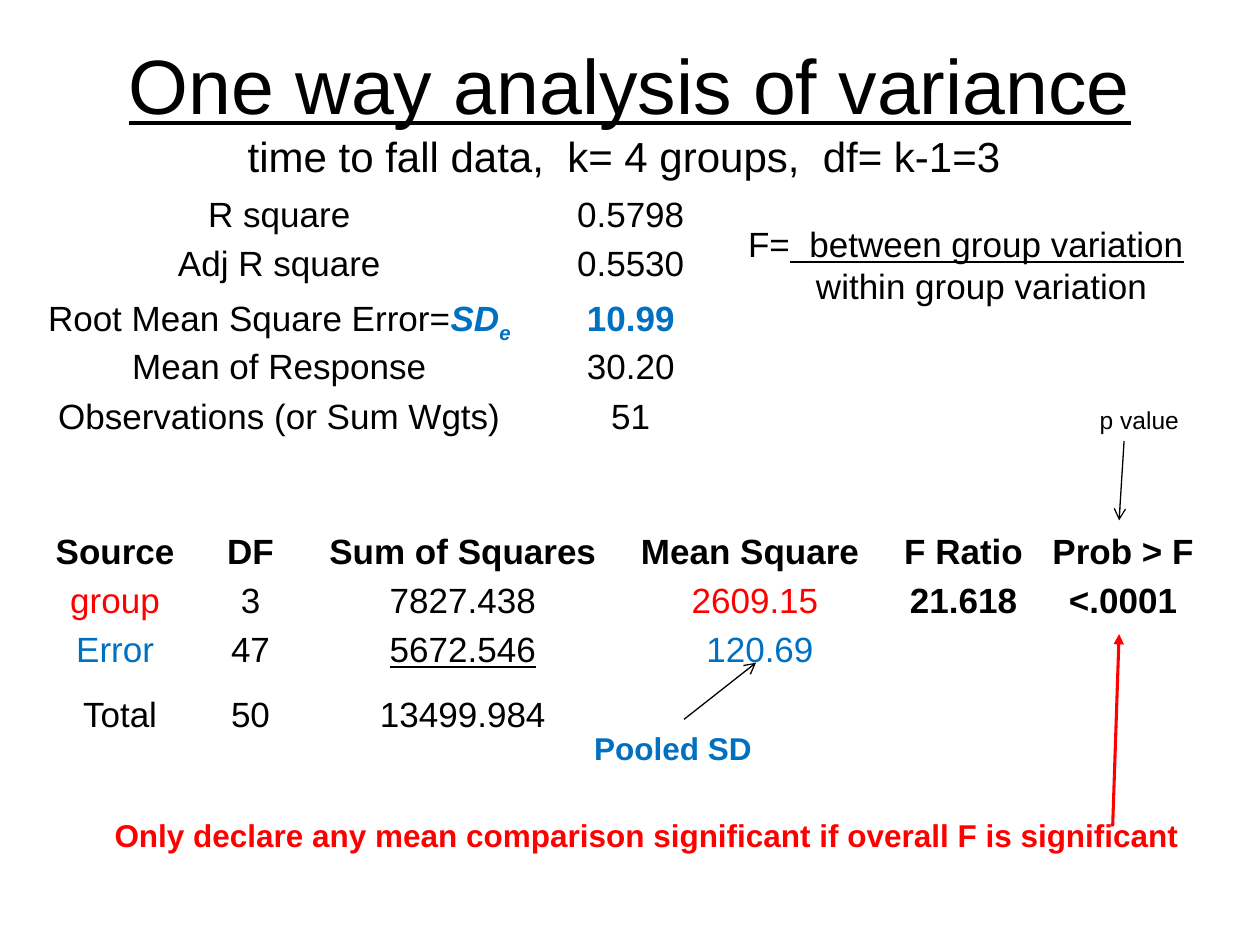
from dataclasses import dataclass

from lxml import etree
from pptx import Presentation
from pptx.dml.color import RGBColor
from pptx.enum.shapes import MSO_CONNECTOR
from pptx.enum.text import MSO_ANCHOR, MSO_AUTO_SIZE, PP_ALIGN
from pptx.oxml.ns import qn
from pptx.util import Cm, Pt

BLACK = RGBColor(0x00, 0x00, 0x00)
RED = RGBColor(0xFF, 0x00, 0x00)
BLUE = RGBColor(0x00, 0x70, 0xC0)
FONT = "Arial"
CENTER = PP_ALIGN.CENTER
TOP = MSO_ANCHOR.TOP
NO_AUTOFIT = MSO_AUTO_SIZE.NONE
STRAIGHT = MSO_CONNECTOR.STRAIGHT
TITLE_ONLY = 5


@dataclass(frozen=True)
class Words:
    text: str
    color: RGBColor = BLACK
    size: float = 20
    bold: bool = False
    italic: bool = False
    underline: bool = False
    subscript: bool = False


@dataclass(frozen=True)
class Entry:
    words: tuple[Words, ...] = ()
    indent: float = 0


@dataclass(frozen=True)
class Grid:
    left: float
    top: float
    widths: tuple[float, ...]
    heights: tuple[float, ...]
    rows: list[list[Entry]]


@dataclass(frozen=True)
class Label:
    left: float
    top: float
    width: float
    height: float
    lines: tuple[Entry, ...]


@dataclass(frozen=True)
class Arrow:
    start: tuple[float, float]
    end: tuple[float, float]
    color: RGBColor = BLACK
    weight: float = 0.75
    head: str = "arrow"


def entry(text: str, color: RGBColor = BLACK, indent: float = 0, **style) -> Entry:
    return Entry((Words(text, color, **style),), indent)


def format_run(run, words: Words) -> None:
    font = run.font
    font.name = FONT
    font.size = Pt(words.size)
    font.bold = words.bold
    font.italic = words.italic
    font.underline = words.underline
    font.color.rgb = words.color
    if words.subscript:
        run._r.get_or_add_rPr().set("baseline", "-25000")


def write(paragraph, line: Entry) -> None:
    for words in line.words:
        run = paragraph.add_run()
        run.text = words.text
        format_run(run, words)


def draw_title(slide, lines: tuple[Words, ...]) -> None:
    title = slide.shapes.title
    title.left, title.top, title.width, title.height = Cm(1.27), Cm(0.76), Cm(22.86), Cm(3.48)
    frame = title.text_frame
    frame.auto_size = NO_AUTOFIT
    frame.vertical_anchor = TOP
    frame.margin_top = 0
    heading = frame.paragraphs[0]
    heading.text = "\v".join(words.text for words in lines)
    heading.alignment = CENTER
    for run, words in zip(heading.runs, lines):
        format_run(run, words)


def draw_grid(slide, grid: Grid) -> None:
    table = slide.shapes.add_table(
        len(grid.heights), len(grid.widths), Cm(grid.left), Cm(grid.top),
        Cm(sum(grid.widths)), Cm(sum(grid.heights)),
    ).table
    table.first_row = False
    table.horz_banding = False
    for column, width in zip(table.columns, grid.widths):
        column.width = Cm(width)
    for row, height, entries in zip(table.rows, grid.heights, grid.rows):
        row.height = Cm(height)
        for cell, content in zip(row.cells, entries):
            cell.fill.background()
            cell.margin_left = Cm(0.08 + content.indent)
            cell.margin_right = Cm(0.08)
            cell.margin_top = cell.margin_bottom = 0
            paragraph = cell.text_frame.paragraphs[0]
            paragraph.alignment = CENTER
            write(paragraph, content)


def draw_label(slide, label: Label) -> None:
    frame = slide.shapes.add_textbox(
        Cm(label.left), Cm(label.top), Cm(label.width), Cm(label.height)
    ).text_frame
    frame.word_wrap = True
    frame.margin_right = 0
    for index, line in enumerate(label.lines):
        paragraph = frame.add_paragraph() if index else frame.paragraphs[0]
        if line.indent:
            paragraph._p.get_or_add_pPr().set("marL", str(Cm(line.indent)))
        write(paragraph, line)


def draw_arrow(slide, arrow: Arrow) -> None:
    connector = slide.shapes.add_connector(
        STRAIGHT, *(Cm(value) for value in arrow.start + arrow.end)
    )
    connector.line.color.rgb = arrow.color
    connector.line.width = Pt(arrow.weight)
    etree.SubElement(connector.line._get_or_add_ln(), qn("a:tailEnd"), type=arrow.head)
    etree.SubElement(connector._element.spPr, qn("a:effectLst"))


TITLE = (
    Words("One way analysis of variance", size=44, underline=True),
    Words("time to fall data,  k= 4 groups,  df= k-1=3 ", size=24),
)

SPACE = 0.2
BLANK = Entry()
ERROR_SD = Entry((
    Words("Root Mean Square Error="),
    Words("SD", BLUE, bold=True, italic=True),
    Words("e", BLUE, bold=True, italic=True, subscript=True),
))
FIT_SUMMARY = Grid(0.64, 3.94, (9.98, 4.19), (0.99, 1.12, 0.97, 0.99, 0.99), [
    [entry("R square"), entry("0.5798")],
    [entry("Adj R square"), entry("0.5530")],
    [ERROR_SD, entry("10.99", BLUE, bold=True)],
    [entry("Mean of Response"), entry("30.20")],
    [entry("Observations (or Sum Wgts)"), entry("51")],
])

HEADINGS = ("Source", "DF", "Sum of Squares", "Mean Square", "F Ratio", "Prob > F")
VARIANCE = Grid(0.76, 10.74, (3.12, 2.34, 6.22, 5.36, 3.25, 3.18), (0.99, 0.99, 1.3, 1.98), [
    [entry(heading, bold=True) for heading in HEADINGS],
    [entry("group", RED), entry("3"), entry("7827.438"), entry("2609.15", RED, SPACE),
     entry("21.618", bold=True), entry("<.0001", bold=True)],
    [entry("Error", BLUE), entry("47"), entry("5672.546", underline=True),
     entry("120.69", BLUE, 2 * SPACE), BLANK, BLANK],
    [entry("Total", indent=SPACE), entry("50"), entry("13499.984"), BLANK, BLANK, BLANK],
])

LABELS = (
    Label(11.73, 14.58, 4.11, 1.02, (entry("Pooled SD", BLUE, size=18, bold=True),)),
    Label(21.92, 8.05, 2.34, 0.86, (entry("p value", size=14),)),
    Label(2.06, 16.33, 22.02, 1.02, (
        entry("Only declare any mean comparison significant if overall F is significant",
              RED, size=18, bold=True),
    )),
    Label(14.83, 4.37, 9.73, 1.96, (
        Entry((Words("F="), Words("  between group variation", underline=True))),
        entry("within group variation", indent=1.37),
    )),
)

ARROWS = (
    Arrow((13.79, 14.5), (15.24, 13.36)),
    Arrow((22.66, 8.89), (22.56, 10.49)),
    Arrow((22.43, 16.66), (22.56, 12.78), RED, 1.75, "triangle"),
)


def main() -> None:
    deck = Presentation()
    deck.slide_width, deck.slide_height = Cm(25.4), Cm(19.05)
    slide = deck.slides.add_slide(deck.slide_layouts[TITLE_ONLY])
    draw_title(slide, TITLE)
    for grid in (FIT_SUMMARY, VARIANCE):
        draw_grid(slide, grid)
    for label in LABELS:
        draw_label(slide, label)
    for arrow in ARROWS:
        draw_arrow(slide, arrow)
    deck.save("out.pptx")


if __name__ == "__main__":
    main()
